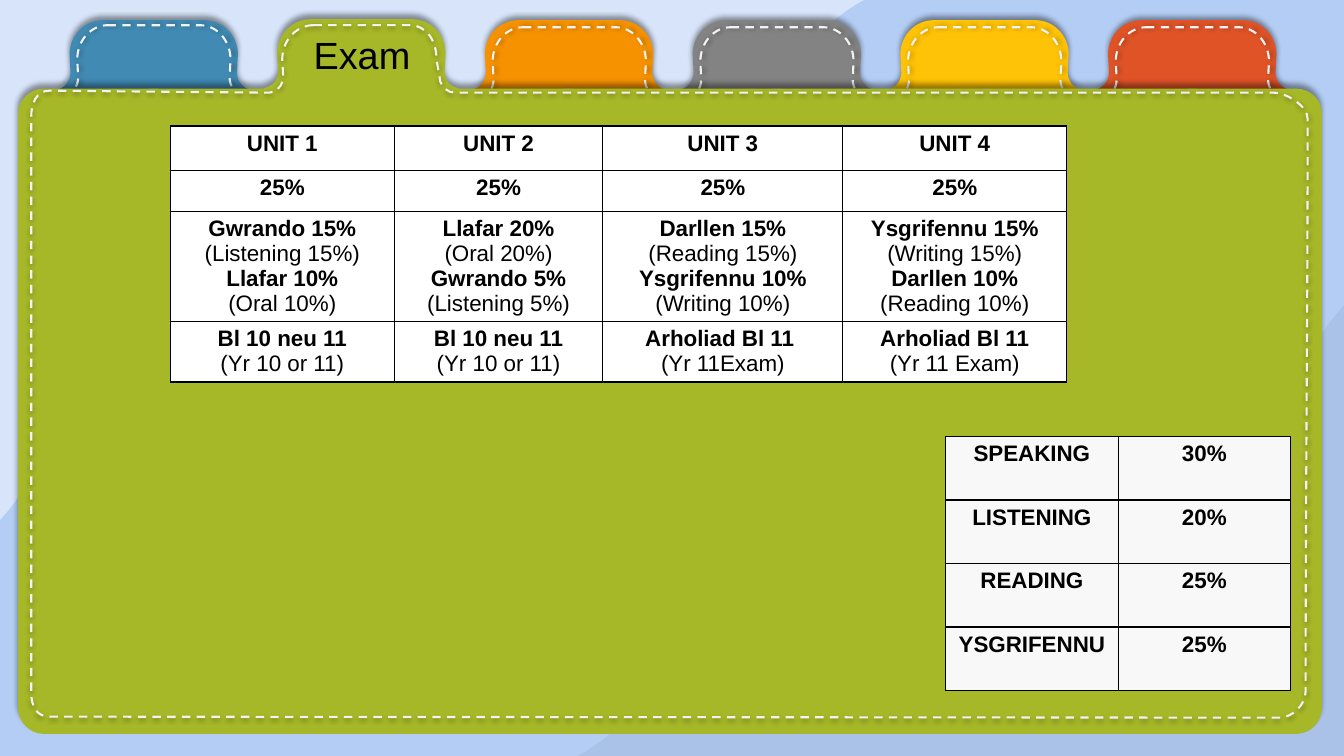
from dataclasses import dataclass

from lxml import etree
from pptx import Presentation, util as u
from pptx.dml.color import RGBColor
from pptx.enum import dml, shapes, text
from pptx.oxml.ns import qn


@dataclass(frozen=True)
class Theme:
    font: str = "Arial"
    title_size: int = 27
    cell_size: int = 16
    ink: str = "000000"
    paper: str = "FFFFFF"
    pale: str = "F8F8F8"
    sky: str = "6D9EEB"
    stitch: str = "F2F2F2"
    folder: str = "A6B727"


TAB_PITCH = 2.06
STITCH_SCALE = 0.91
TABS = [
    (5, "DF5327", 2, 0.27),
    (4, "FEC306", 3, 0.27),
    (3, "838383", 2, 0.27),
    (2, "F69200", 3, 0.27),
    (0, "418AB3", 3, 0.25),
]

LOWER_WAVE = [
    (13.33, 3.03), (12.68, 3.72, 12.21, 5.59, 11.37, 5.11),
    (10.53, 4.63, 10.23, 3.96, 9.35, 5.38), (8.47, 6.8, 8.19, 5.28, 7.58, 5.64),
    (6.98, 5.99, 6.46, 7.12, 5.73, 7.5), (13.33, 7.5),
]
UPPER_WAVE = [
    (0, 5.16), (0.74, 4.36, 1.27, 2.21, 2.22, 2.76),
    (3.16, 3.31, 3.5, 4.1, 4.49, 2.45), (5.48, 0.81, 5.8, 2.56, 6.48, 2.15),
    (7.16, 1.74, 7.74, 0.44, 8.57, 0), (0, 0),
]
TAB = [
    (0.48, 0), (1.49, 0), (1.67, 0, 1.82, 0.15, 1.82, 0.34), (1.81, 0.52),
    (1.81, 0.61, 1.88, 0.69, 1.97, 0.69), (0.98, 0.68), (0, 0.69),
    (0.09, 0.69, 0.16, 0.61, 0.16, 0.52), (0.15, 0.34),
    (0.15, 0.15, 0.3, 0, 0.48, 0),
]
FOLDER = [
    (3.08, 0.19), (4.09, 0.19), (4.27, 0.19, 4.42, 0.34, 4.42, 0.53),
    (4.41, 0.71), (4.41, 0.78, 4.45, 0.84, 4.5, 0.86), (4.56, 0.88),
    (12.86, 0.88), (13, 0.88, 13.11, 0.99, 13.11, 1.12), (13.11, 7.03),
    (13.11, 7.16, 13, 7.28, 12.86, 7.28), (0.43, 7.28),
    (0.3, 7.28, 0.18, 7.16, 0.18, 7.03), (0.18, 1.12),
    (0.18, 0.99, 0.3, 0.88, 0.43, 0.88), (2.61, 0.88), (2.66, 0.86),
    (2.72, 0.84, 2.76, 0.78, 2.76, 0.71), (2.75, 0.53),
    (2.75, 0.34, 2.9, 0.19, 3.08, 0.19),
]
FOLDER_STITCH = [
    (3.11, 0.25), (4.06, 0.25), (4.23, 0.25, 4.33, 0.4, 4.33, 0.59),
    (4.36, 0.76), (4.36, 0.83, 4.4, 0.88, 4.46, 0.91), (4.51, 0.92),
    (12.63, 0.92), (12.76, 0.92, 12.97, 1.05, 12.97, 1.18),
    (12.97, 3.09, 12.95, 4.96, 12.95, 6.86),
    (12.95, 6.99, 12.82, 7.12, 12.69, 7.12), (0.49, 7.11),
    (0.36, 7.11, 0.31, 7, 0.31, 6.87), (0.31, 4.96, 0.31, 3.06, 0.31, 1.16),
    (0.31, 1.03, 0.36, 0.9, 0.49, 0.9), (2.67, 0.92), (2.72, 0.91),
    (2.77, 0.88, 2.81, 0.83, 2.81, 0.76), (2.8, 0.59),
    (2.8, 0.4, 2.94, 0.25, 3.11, 0.25),
]

UNITS = [
    ["UNIT 1", "UNIT 2", "UNIT 3", "UNIT 4"],
    ["25%"] * 4,
    ["Gwrando 15%\n(Listening 15%)\nLlafar 10%\n(Oral 10%)",
     "Llafar 20%\n(Oral 20%)\nGwrando 5%\n(Listening 5%)",
     "Darllen 15%\n(Reading 15%)\nYsgrifennu 10%\n(Writing 10%)",
     "Ysgrifennu 15%\n(Writing 15%)\nDarllen 10%\n(Reading 10%)"],
    ["Bl 10 neu 11\n(Yr 10 or 11)", "Bl 10 neu 11\n(Yr 10 or 11)",
     "Arholiad Bl 11 \n(Yr 11Exam)", "Arholiad Bl 11\n(Yr 11 Exam)"],
]
SKILLS = [["SPEAKING", "30%"], ["LISTENING", "20%"],
          ["READING", "25%"], ["YSGRIFENNU", "25%"]]


class FolderSlide:
    def __init__(self, deck, theme):
        self.theme = theme
        self.slide = deck.slides.add_slide(deck.slide_layouts[5])
        self.paint(self.slide.background.fill, theme.sky)

    def paint(self, fill, color, opacity=100):
        fill.solid()
        fill.fore_color.rgb = RGBColor.from_string(color)
        if opacity < 100:
            rgb = fill._xPr.find(".//" + qn("a:srgbClr"))
            etree.SubElement(rgb, qn("a:alpha"), val=str(opacity * 1000))

    def add_words(self, paragraph, words, size, bold=False):
        paragraph.alignment = text.PP_ALIGN.CENTER
        run = paragraph.add_run()
        run.text = words
        run.font.name, run.font.size, run.font.bold = self.theme.font, u.Pt(size), bold
        run.font.color.rgb = RGBColor.from_string(self.theme.ink)

    def veil(self, width, height, color, opacity):
        veil = self.slide.shapes.add_shape(
            shapes.MSO_SHAPE.RECTANGLE, 0, 0, u.Inches(width), u.Inches(height))
        veil.shadow.inherit = False
        veil.line.fill.background()
        self.paint(veil.fill, color, opacity)

    def outline(self, steps, left=0, top=0, stretch=1):
        points = [(u.Inches(left + x * stretch), u.Inches(top + y))
                  for step in steps for x, y in zip(step[::2], step[1::2])]
        builder = self.slide.shapes.build_freeform(*points[0])
        builder.add_line_segments(points[1:], close=True)
        outline = builder.convert_to_shape()
        lines = iter(outline.element.findall(".//" + qn("a:lnTo")))
        for step in steps[1:]:
            segment = next(lines)
            if len(step) == 6:
                curve = etree.Element(qn("a:cubicBezTo"))
                segment.addprevious(curve)
                for part in (segment, next(lines), next(lines)):
                    curve.append(part[0])
                    part.getparent().remove(part)
        outline.shadow.inherit = False
        return outline

    def shade(self, shape, distance, direction):
        effects = shape.element.spPr.find(qn("a:effectLst"))
        shadow = etree.SubElement(
            effects, qn("a:outerShdw"), blurRad=str(u.Pt(4)), dist=str(u.Pt(distance)),
            dir=str(direction * 60000), algn="ctr", rotWithShape="0")
        color = etree.SubElement(shadow, qn("a:srgbClr"), val=self.theme.ink)
        etree.SubElement(color, qn("a:alpha"), val="40000")

    def panel(self, steps, color, left=0, top=0, opacity=100, lift=0):
        panel = self.outline(steps, left, top)
        self.paint(panel.fill, color, opacity)
        panel.line.fill.background()
        if lift:
            self.shade(panel, lift, 270)

    def stitching(self, steps, left=0, top=0, stretch=1, direction=0):
        seam = self.outline(steps, left, top, stretch)
        seam.fill.background()
        self.paint(seam.line.fill, self.theme.stitch)
        seam.line.width = u.Pt(1.5)
        seam.line.dash_style = dml.MSO_LINE.DASH
        self.shade(seam, 1.5, direction)

    def title(self, words, *box):
        title = self.slide.shapes.title
        title.left, title.top, title.width, title.height = map(u.Inches, box)
        frame = title.text_frame
        frame.auto_size = text.MSO_AUTO_SIZE.NONE
        frame.vertical_anchor = text.MSO_ANCHOR.MIDDLE
        frame.margin_left = frame.margin_right = u.Inches(0.1)
        frame.margin_top = frame.margin_bottom = u.Inches(0.1)
        self.add_words(frame.paragraphs[0], words, self.theme.title_size)
        title.element.getparent().append(title.element)

    def border(self, cell):
        for side in ("a:lnL", "a:lnR", "a:lnT", "a:lnB"):
            edge = etree.SubElement(cell._tc.get_or_add_tcPr(), qn(side), w=str(u.Pt(1)))
            fill = etree.SubElement(edge, qn("a:solidFill"))
            etree.SubElement(fill, qn("a:srgbClr"), val=self.theme.ink)

    def table(self, left, top, widths, heights, content, color):
        table = self.slide.shapes.add_table(
            len(heights), len(widths), u.Inches(left), u.Inches(top),
            u.Inches(sum(widths)), u.Inches(sum(heights))).table
        table.first_row = table.horz_banding = False
        for column, width in zip(table.columns, widths):
            column.width = u.Inches(width)
        for row, height, entries in zip(table.rows, heights, content):
            row.height = u.Inches(height)
            for cell, entry in zip(row.cells, entries):
                self.border(cell)
                self.paint(cell.fill, color)
                frame = cell.text_frame
                for number, line in enumerate(entry.split("\n")):
                    paragraph = frame.add_paragraph() if number else frame.paragraphs[0]
                    self.add_words(paragraph, line, self.theme.cell_size, line[0] != "(")


def main():
    deck = Presentation()
    deck.slide_width, deck.slide_height = u.Inches(13.33), u.Inches(7.5)
    theme = Theme()
    exam = FolderSlide(deck, theme)
    exam.veil(13.33, 7.5, theme.paper, 49)
    exam.panel(LOWER_WAVE, theme.ink, opacity=5)
    exam.panel(UPPER_WAVE, theme.paper, opacity=47)
    for slot, color, lift, seam_top in TABS:
        left = 0.54 + slot * TAB_PITCH
        exam.panel(TAB, color, left, 0.2, lift=lift)
        exam.stitching(TAB, left + 0.09, seam_top, STITCH_SCALE)
    exam.panel(FOLDER, theme.folder, lift=3)
    exam.stitching(FOLDER_STITCH, direction=90)
    exam.title("Exam", 2.92, 0.29, 1.34, 0.5)
    exam.table(1.69, 1.25, [2.22, 2.07, 2.38, 2.22], [0.44, 0.41, 1.09, 0.6],
               UNITS, theme.paper)
    exam.table(9.38, 4.33, [1.71] * 2, [0.63] * 4, SKILLS, theme.pale)
    deck.save("out.pptx")


if __name__ == "__main__":
    main()
